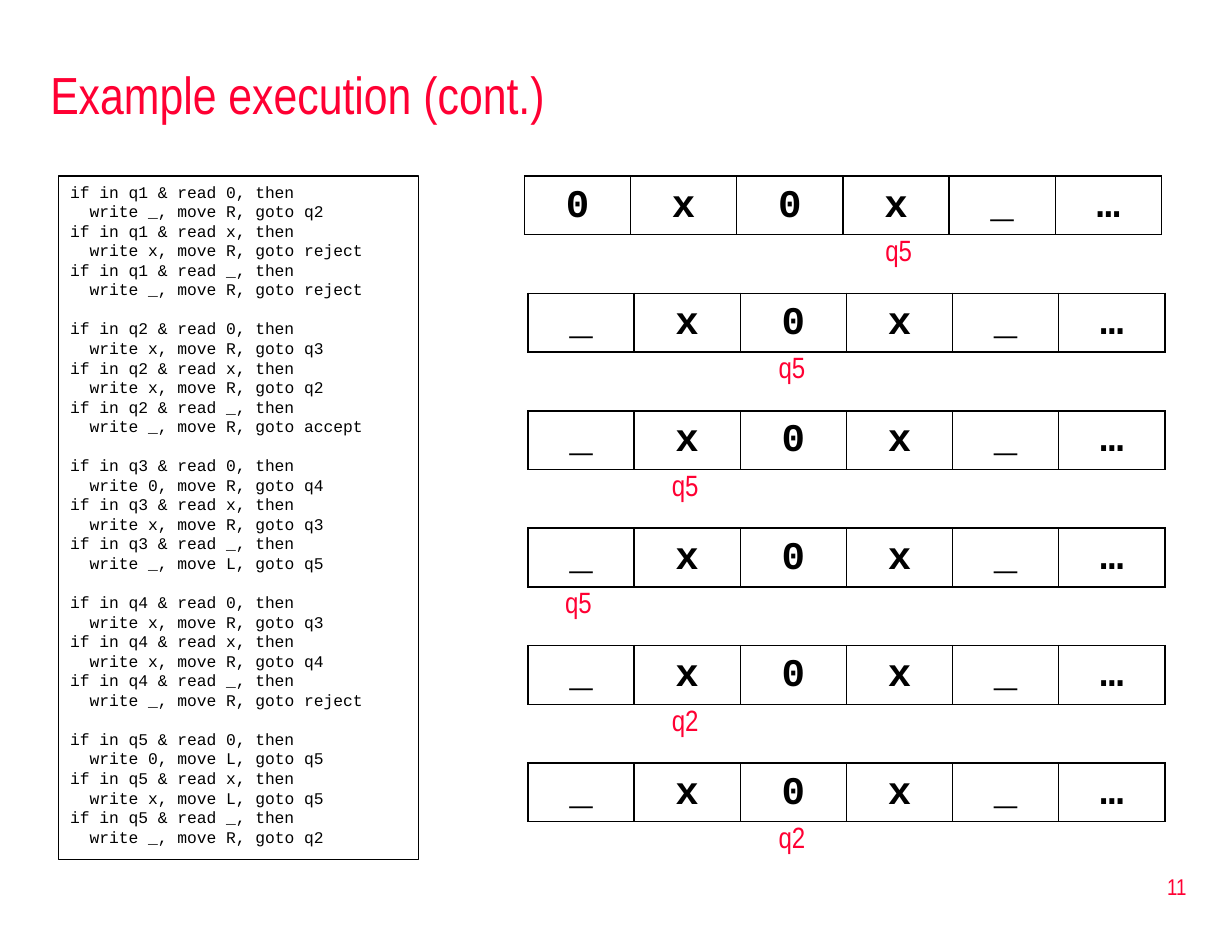
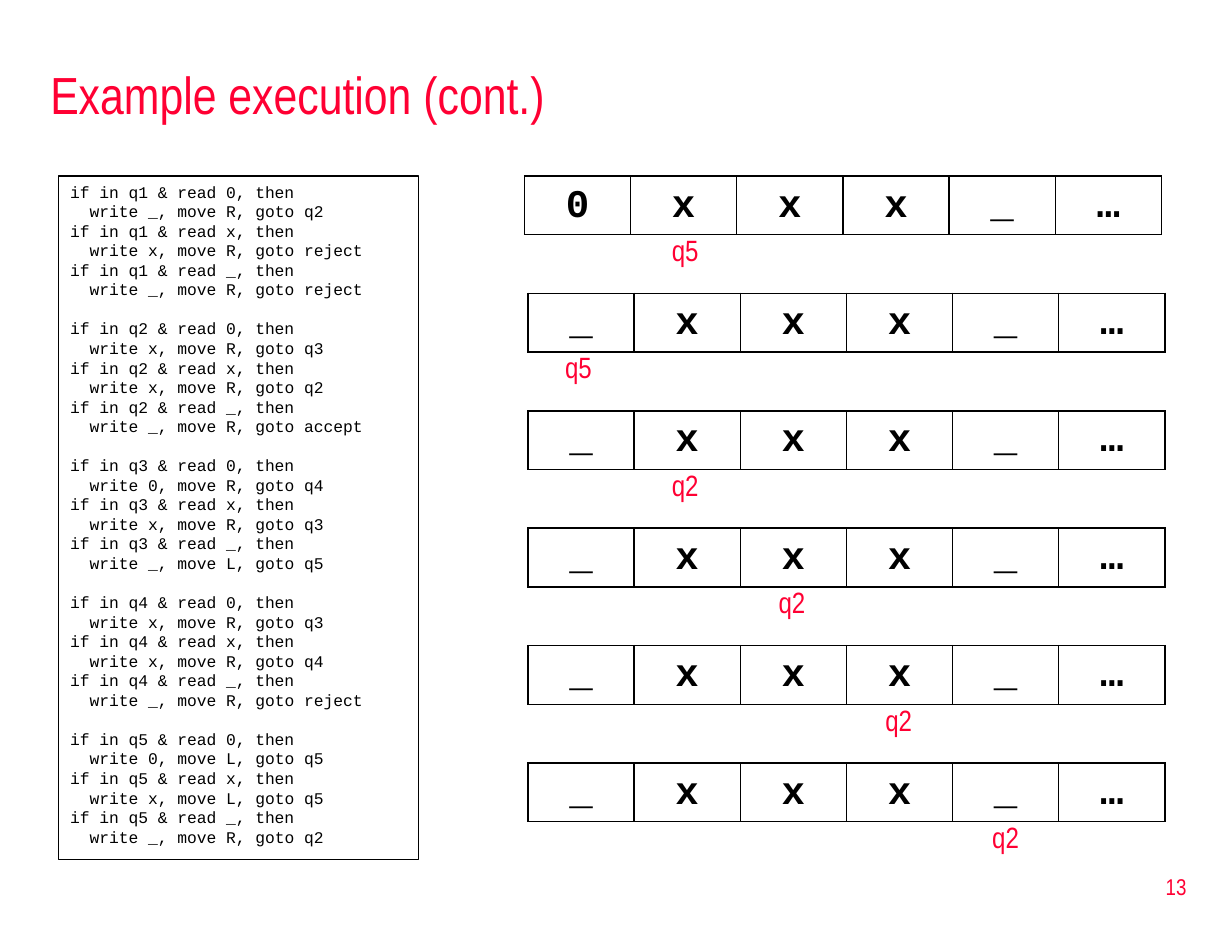
from lxml import etree
from pptx import Presentation
from pptx.dml.color import RGBColor
from pptx.enum.shapes import MSO_SHAPE
from pptx.enum.text import MSO_ANCHOR, PP_ALIGN
from pptx.oxml.ns import qn
from pptx.util import Pt

PX = 9144
RED = RGBColor(0xFF, 0x00, 0x33)
BLACK = RGBColor(0x00, 0x00, 0x00)
SANS = "Arial Narrow"
MONO = "Courier New"
LEFT, CENTER, RIGHT = PP_ALIGN.LEFT, PP_ALIGN.CENTER, PP_ALIGN.RIGHT
TOP, MIDDLE = MSO_ANCHOR.TOP, MSO_ANCHOR.MIDDLE
RECTANGLE = MSO_SHAPE.RECTANGLE

TITLE = "Example execution (cont.)"
RULES = {
    "q1": ["0 _ R q2", "x x R reject", "_ _ R reject"],
    "q2": ["0 x R q3", "x x R q2", "_ _ R accept"],
    "q3": ["0 0 R q4", "x x R q3", "_ _ L q5"],
    "q4": ["0 x R q3", "x x R q4", "_ _ R reject"],
    "q5": ["0 0 L q5", "x x L q5", "_ _ R q2"],
}
EXECUTIONS = {
    11: [("0x0x_…", "q5", 3), ("_x0x_…", "q5", 2), ("_x0x_…", "q5", 1),
         ("_x0x_…", "q5", 0), ("_x0x_…", "q2", 1), ("_x0x_…", "q2", 2)],
    13: [("0xxx_…", "q5", 1), ("_xxx_…", "q5", 0), ("_xxx_…", "q2", 1),
         ("_xxx_…", "q2", 2), ("_xxx_…", "q2", 3), ("_xxx_…", "q2", 4)],
}
TAPE_WIDTH = 543
TAPE_HEIGHT = 42
STEP_PITCH = 100
STATE_PITCH = 91


def write(paragraph, text, size, font=SANS, color=RED, bold=False, align=LEFT,
          line=None, before=0, indent=0):
    paragraph.alignment = align
    paragraph.space_before = Pt(before)
    if line:
        paragraph.line_spacing = Pt(line)
    if indent:
        paragraph._p.get_or_add_pPr().set("marL", str(Pt(indent)))
    run = paragraph.add_run()
    run.text = text
    run.font.name = font
    run.font.size = Pt(size)
    run.font.bold = bold
    run.font.color.rgb = color


def add_label(slide, text, left, top, width, height, anchor=TOP, **style):
    frame = slide.shapes.add_textbox(left * PX, top * PX, width * PX, height * PX).text_frame
    frame.word_wrap = True
    frame.vertical_anchor = anchor
    write(frame.paragraphs[0], text, **style)


prs = Presentation()
prs.slide_width = 1050 * PX
prs.slide_height = 800 * PX

for page, steps in EXECUTIONS.items():
    slide = prs.slides.add_slide(prs.slide_layouts[6])
    add_label(slide, TITLE, 33, 42, 992, 75, anchor=MIDDLE, size=32)
    add_label(slide, str(page), 802, 729, 219, 53, anchor=MIDDLE, size=14, align=RIGHT)

    program = slide.shapes.add_shape(RECTANGLE, 50 * PX, 150 * PX, 307 * PX, 582 * PX)
    program.shadow.inherit = False
    program.fill.background()
    program.line.color.rgb = BLACK
    program.line.width = Pt(0.75)
    listing = program.text_frame
    listing.word_wrap = True
    listing.vertical_anchor = TOP
    code = dict(size=10, font=MONO, color=BLACK, line=12)
    paragraph = listing.paragraphs[0]
    for state, rules in RULES.items():
        for number, rule in enumerate(rules):
            symbol, written, move, target = rule.split()
            gap = 12 if number == 0 and state != "q1" else 0
            if paragraph is None:
                paragraph = listing.add_paragraph()
            write(paragraph, f"if in {state} & read {symbol}, then", before=gap, **code)
            write(listing.add_paragraph(), f"write {written}, move {move}, goto {target}",
                  indent=12, **code)
            paragraph = None

    for step, (symbols, state, head) in enumerate(steps):
        top = 150 + step * STEP_PITCH
        left = 447 if step == 0 else 450
        tape = slide.shapes.add_table(1, len(symbols), left * PX, top * PX,
                                      TAPE_WIDTH * PX, TAPE_HEIGHT * PX).table
        tape.first_row = False
        tape.horz_banding = False
        for cell, symbol in zip(tape.rows[0].cells, symbols):
            write(cell.text_frame.paragraphs[0], symbol, size=24, font=MONO,
                  color=BLACK, bold=True, align=CENTER, line=28.8)
            properties = cell._tc.get_or_add_tcPr()
            for side in ("a:lnL", "a:lnR", "a:lnT", "a:lnB"):
                border = etree.SubElement(properties, qn(side), w=str(Pt(1)))
                fill = etree.SubElement(border, qn("a:solidFill"))
                etree.SubElement(fill, qn("a:srgbClr"), val=str(BLACK))
            cell.fill.background()
        add_label(slide, state, 450 + head * STATE_PITCH, top + TAPE_HEIGHT + 1, 86, 40,
                  size=18, align=CENTER)

prs.save("out.pptx")
